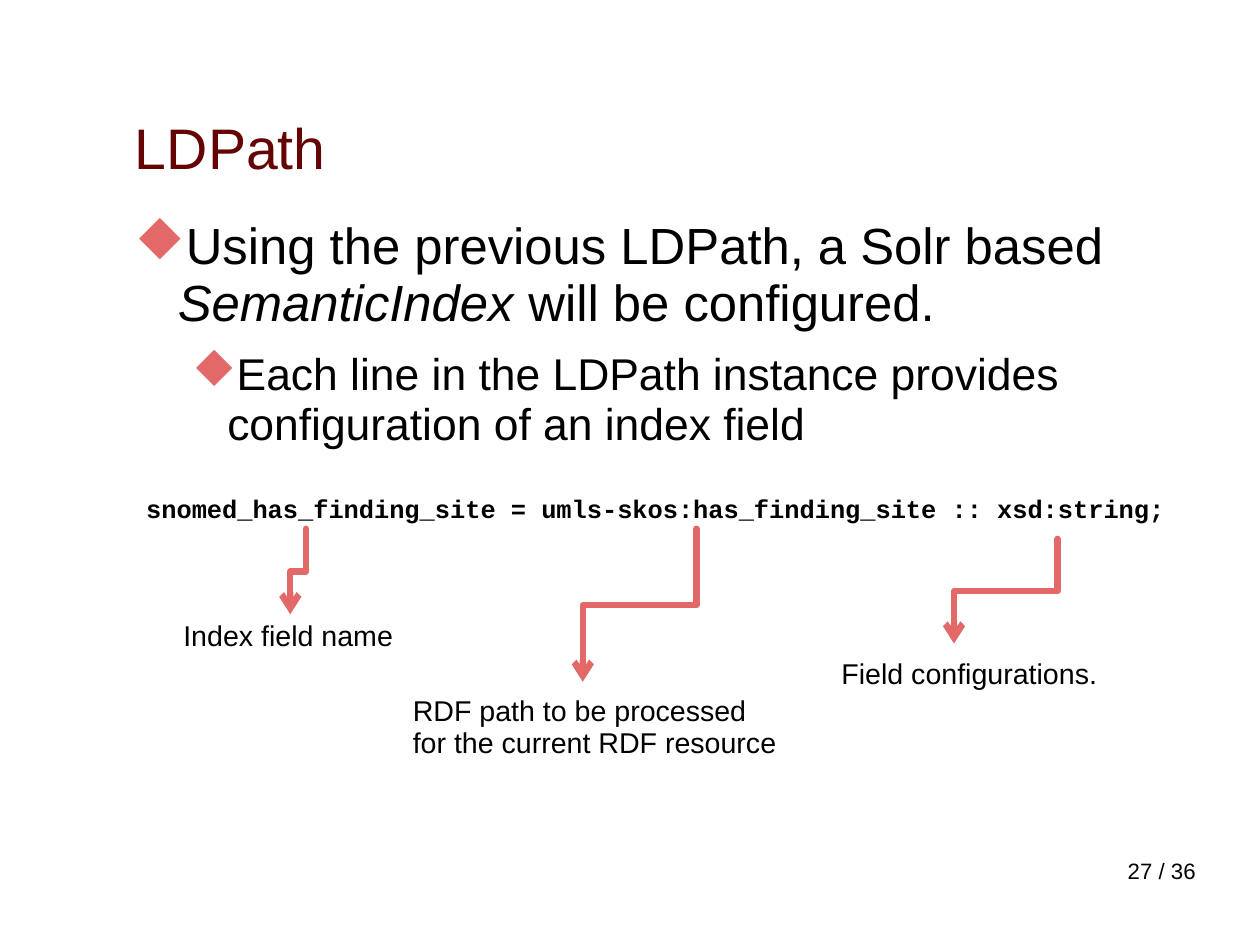
from lxml.etree import SubElement
from pptx import Presentation
from pptx.dml.color import RGBColor
from pptx.enum.shapes import MSO_CONNECTOR as Link
from pptx.enum.text import MSO_ANCHOR as Anchor, PP_ALIGN as Align
from pptx.oxml.ns import qn
from pptx.util import Pt

PX = 9000
BLACK, MAROON, CORAL = "000000", "640404", "E36969"
PADDED, FLUSH = (10, 5, 10, 5), (0, 0, 0, 0)


def px(length):
    """Turn px, forty to the centimetre, into EMU."""
    return round(length * PX)


def color(code):
    """Turn a hex string into a colour."""
    return RGBColor.from_string(code)


def apply(target, values):
    """Set each named attribute on the target."""
    for name, value in values.items():
        setattr(target, name, value)


def add_box(page, place, insets=PADDED, wrap=True, anchor=Anchor.TOP):
    """Add an empty text box and return its text frame."""
    frame = page.shapes.add_textbox(*map(px, place)).text_frame
    sides = ("margin_left", "margin_top", "margin_right", "margin_bottom")
    apply(frame, dict(zip(sides, map(px, insets))))
    apply(frame, {"word_wrap": wrap, "vertical_anchor": anchor})
    return frame


def add_para(frame, spans, size, first=True, font="Arial", code=BLACK, **layout):
    """Write one paragraph of (text, font values) spans."""
    para = frame.paragraphs[0] if first else frame.add_paragraph()
    apply(para, {"line_spacing": 0.93, **layout})
    for text, values in spans:
        span = para.add_run()
        span.text = text
        apply(span.font, {"name": font, "size": Pt(size), **values})
        span.font.color.rgb = color(code)
    return para


def add_bullet(para, left, hang):
    """Give a paragraph a hanging bullet, the diamond that Wingdings keeps at u."""
    settings = para._p.get_or_add_pPr()
    settings.set("marL", str(px(left)))
    settings.set("indent", str(-px(hang)))
    tint = SubElement(settings, qn("a:buClr"))
    SubElement(tint, qn("a:srgbClr"), val=CORAL)
    SubElement(settings, qn("a:buFont"), typeface="Wingdings", charset="2")
    SubElement(settings, qn("a:buChar"), char="u")


def add_label(page, place, lines):
    """Add a caption with one paragraph per line."""
    frame = add_box(page, place, wrap=False)
    for index, line in enumerate(lines):
        add_para(frame, [(line, {})], 18, first=index == 0)


def add_elbow_arrow(page, start, end):
    """Draw an elbow arrow that leaves downwards, as a quarter-turned connector."""
    (x1, y1), (x2, y2) = start, end
    middle_x, middle_y = (x1 + x2) / 2, (y1 + y2) / 2
    half_run, half_rise = (y2 - y1) / 2, (x1 - x2) / 2
    corners = (middle_x - half_run, middle_y - half_rise,
               middle_x + half_run, middle_y + half_rise)
    arrow = page.shapes.add_connector(Link.ELBOW, *map(px, corners))
    arrow.line.color.rgb = color(CORAL)
    arrow.line.width = Pt(4)
    properties = arrow.element.spPr
    properties.find(qn("a:xfrm")).set("rot", "5400000")
    stroke = properties.find(qn("a:ln"))
    stroke.set("cap", "rnd")
    SubElement(stroke, qn("a:round"))
    SubElement(stroke, qn("a:tailEnd"), type="arrow")
    SubElement(properties, qn("a:effectLst"))


def main():
    """Build the LDPath slide and save it."""
    deck = Presentation()
    apply(deck, {"slide_width": px(1120), "slide_height": px(840)})
    page = deck.slides.add_slide(deck.slide_layouts[6])

    title = add_box(page, (120, 96, 919, 76), FLUSH, anchor=Anchor.MIDDLE)
    add_para(title, [("LDPath", {})], 36, code=MAROON)

    body = add_box(page, (120, 192, 919, 488), (0, 3, 0, 0))
    intro = [("Using the previous LDPath, a Solr based ", {}),
             ("SemanticIndex ", {"italic": True}),
             ("will be configured.", {})]
    add_bullet(add_para(body, intro, 32), 38, 38)
    detail = "Each line in the LDPath instance provides configuration of an index field"
    add_bullet(add_para(body, [(detail, {})], 28, first=False, level=1,
                        space_before=Pt(11.5)), 82, 31)

    rule = "snomed_has_finding_site = umls-skos:has_finding_site :: xsd:string;"
    add_para(add_box(page, (120, 436, 940, 37)), [(rule, {"bold": True})], 16,
             font="Courier New")

    for start, end, place, lines in (
        ((272, 470), (258, 546), (153, 547, 208, 39), ["Index field name"]),
        ((619, 470), (518, 606), (357, 614, 346, 67),
         ["RDF path to be processed", "for the current RDF resource"]),
        ((940, 479), (848, 572), (738, 581, 250, 39), ["Field configurations."]),
    ):
        add_elbow_arrow(page, start, end)
        add_label(page, place, lines)

    number = add_box(page, (802, 764, 261, 58), FLUSH)
    add_para(number, [("27 / 36", {})], 14, alignment=Align.RIGHT)
    deck.save("out.pptx")


if __name__ == "__main__":
    main()
